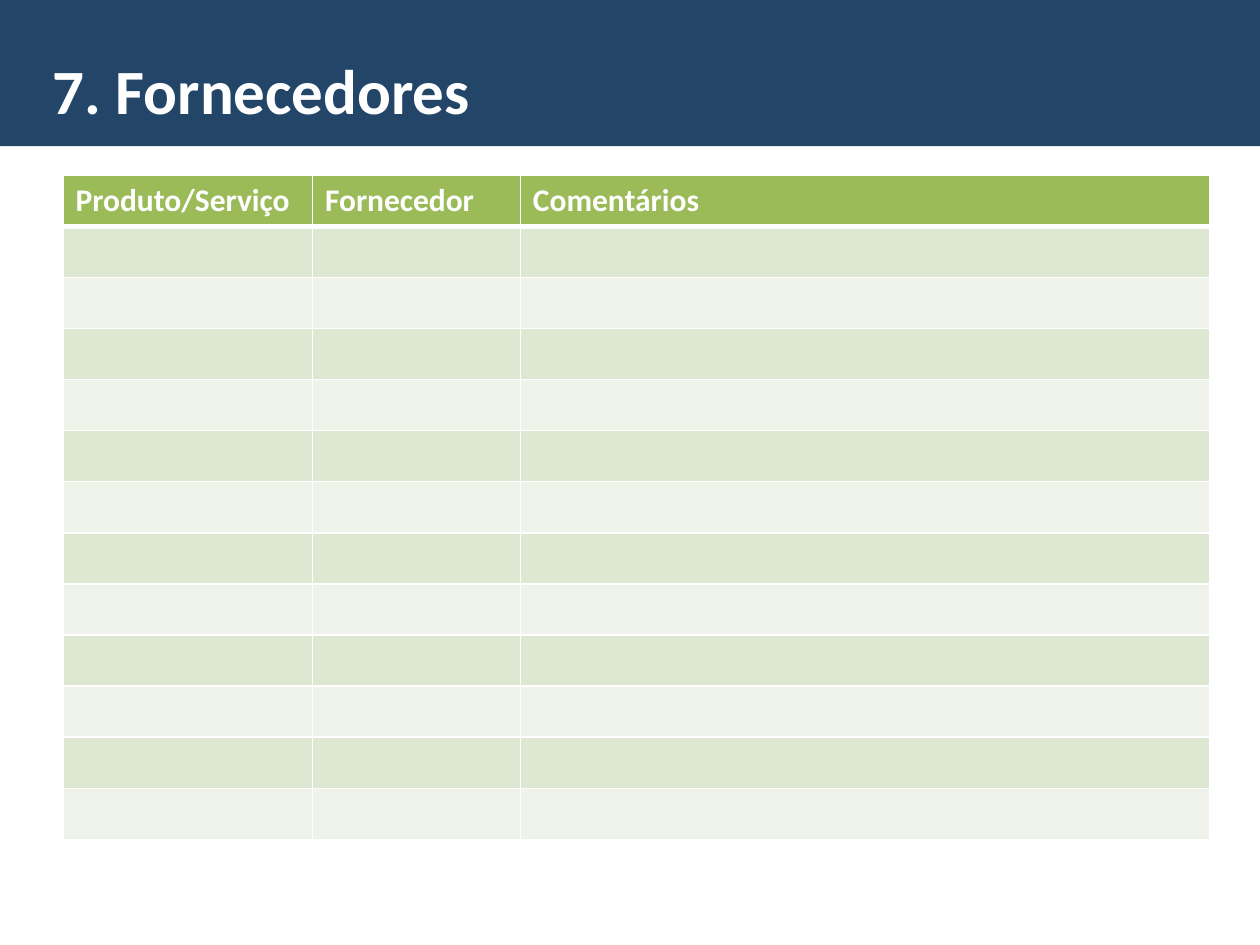
from pptx import Presentation
from pptx.dml.color import RGBColor
from pptx.enum.shapes import MSO_SHAPE
from pptx.enum.text import MSO_ANCHOR, MSO_AUTO_SIZE, PP_ALIGN
from pptx.oxml import parse_xml
from pptx.oxml.ns import nsdecls
from pptx.util import Inches, Pt

HEADERS = ["Produto/Serviço", "Fornecedor", "Comentários"]
COLUMN_WIDTHS = [1.98, 1.65, 5.47]
ROW_COUNT = 13
ROW_HEIGHT = 0.4
HEADER_FILL = "9BBB59"
BAND_FILLS = ["EFF3EA", "DEE7D1"]


def paint(fill, color):
    fill.solid()
    fill.fore_color.rgb = RGBColor.from_string(color)


def add_borders(cell, widths):
    """Draw white cell borders; widths maps a side (L, R, T, B) to points."""
    properties = cell._tc.get_or_add_tcPr()
    for index, (side, width) in enumerate(widths.items()):
        properties.insert(index, parse_xml(
            f'<a:ln{side} {nsdecls("a")} w="{Pt(width)}"><a:solidFill>'
            f'<a:srgbClr val="FFFFFF"/></a:solidFill></a:ln{side}>'))


deck = Presentation()
deck.slide_width, deck.slide_height = Inches(10), Inches(7.5)
page = deck.slides.add_slide(deck.slide_layouts[5])

# Title band, behind the title
band = page.shapes.add_shape(MSO_SHAPE.RECTANGLE, 0, 0, Inches(10), Inches(1.16))
band.shadow.inherit = False
paint(band.fill, "224568")
band.line.fill.background()
title = page.shapes.title
title._element.addprevious(band._element)

title.left, title.top = Inches(0.2), Inches(0.36)
title.width, title.height = Inches(9.41), Inches(0.55)
frame = title.text_frame
frame.text = "7. Fornecedores"
frame.word_wrap = True
frame.auto_size = MSO_AUTO_SIZE.NONE
frame.vertical_anchor = MSO_ANCHOR.TOP
frame.margin_left = Inches(0.22)
para = frame.paragraphs[0]
para.alignment = PP_ALIGN.LEFT
title_font = para.runs[0].font
title_font.size = Pt(36)

# Supplier table
table = page.shapes.add_table(
    ROW_COUNT, len(HEADERS), Inches(0.5), Inches(1.39),
    Inches(sum(COLUMN_WIDTHS)), Inches(ROW_COUNT * ROW_HEIGHT)).table
for column, width in zip(table.columns, COLUMN_WIDTHS):
    column.width = Inches(width)

for number, row in enumerate(table.rows):
    row.height = Inches(ROW_HEIGHT)
    for cell in row.cells:
        paint(cell.fill, BAND_FILLS[number % 2] if number else HEADER_FILL)
        add_borders(cell, {"L": 1, "R": 1,
                           "T": 3 if number == 1 else 1,
                           "B": 1 if number else 3})

header_fonts = []
for cell, header in zip(table.rows[0].cells, HEADERS):
    cell.text_frame.text = header
    span = cell.text_frame.paragraphs[0].runs[0]
    span.font.size = Pt(18)
    header_fonts.append(span.font)

for font in [title_font, *header_fonts]:
    font.name = "Calibri"
    font.bold = True
    font.color.rgb = RGBColor.from_string("FFFFFF")

deck.save("out.pptx")
